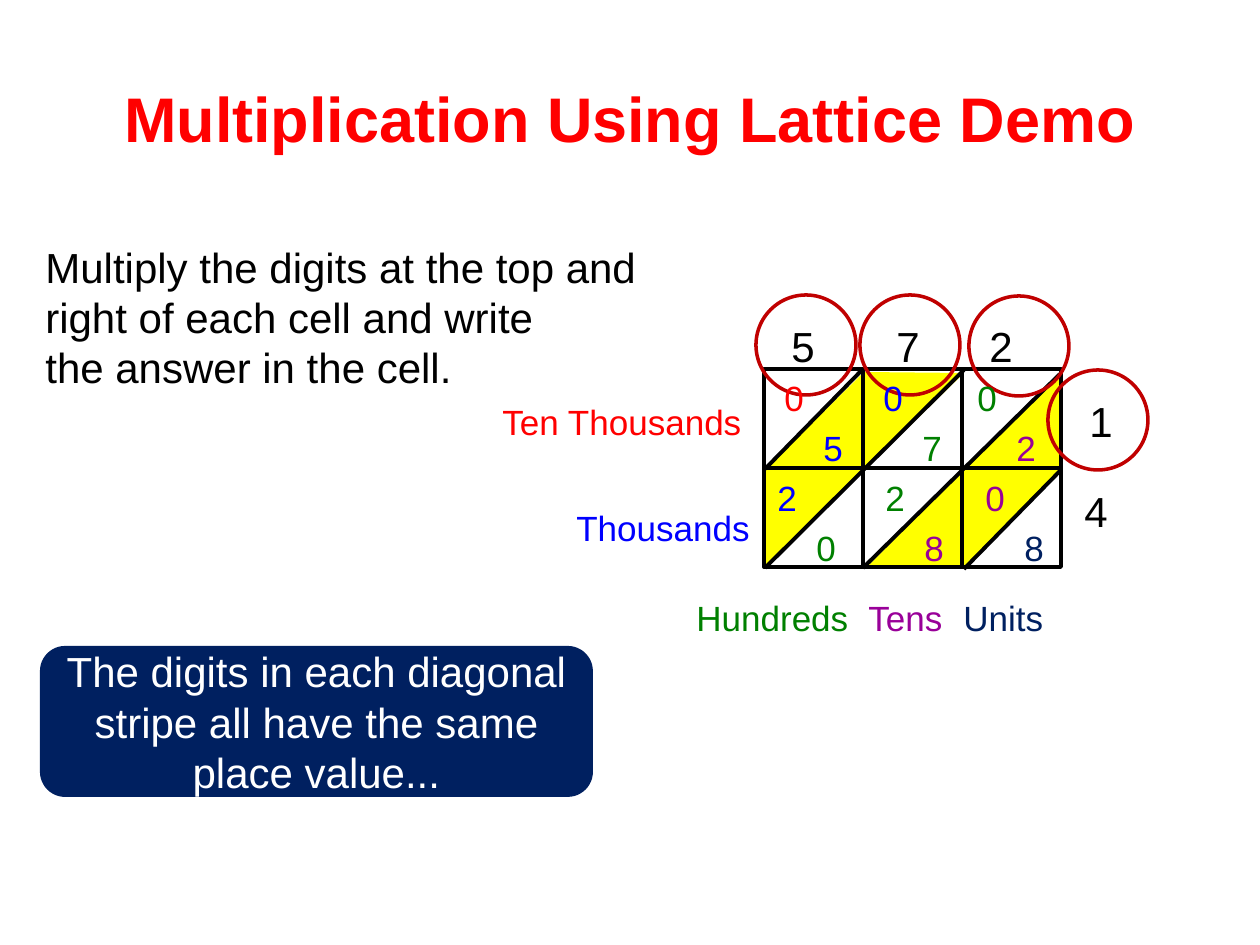
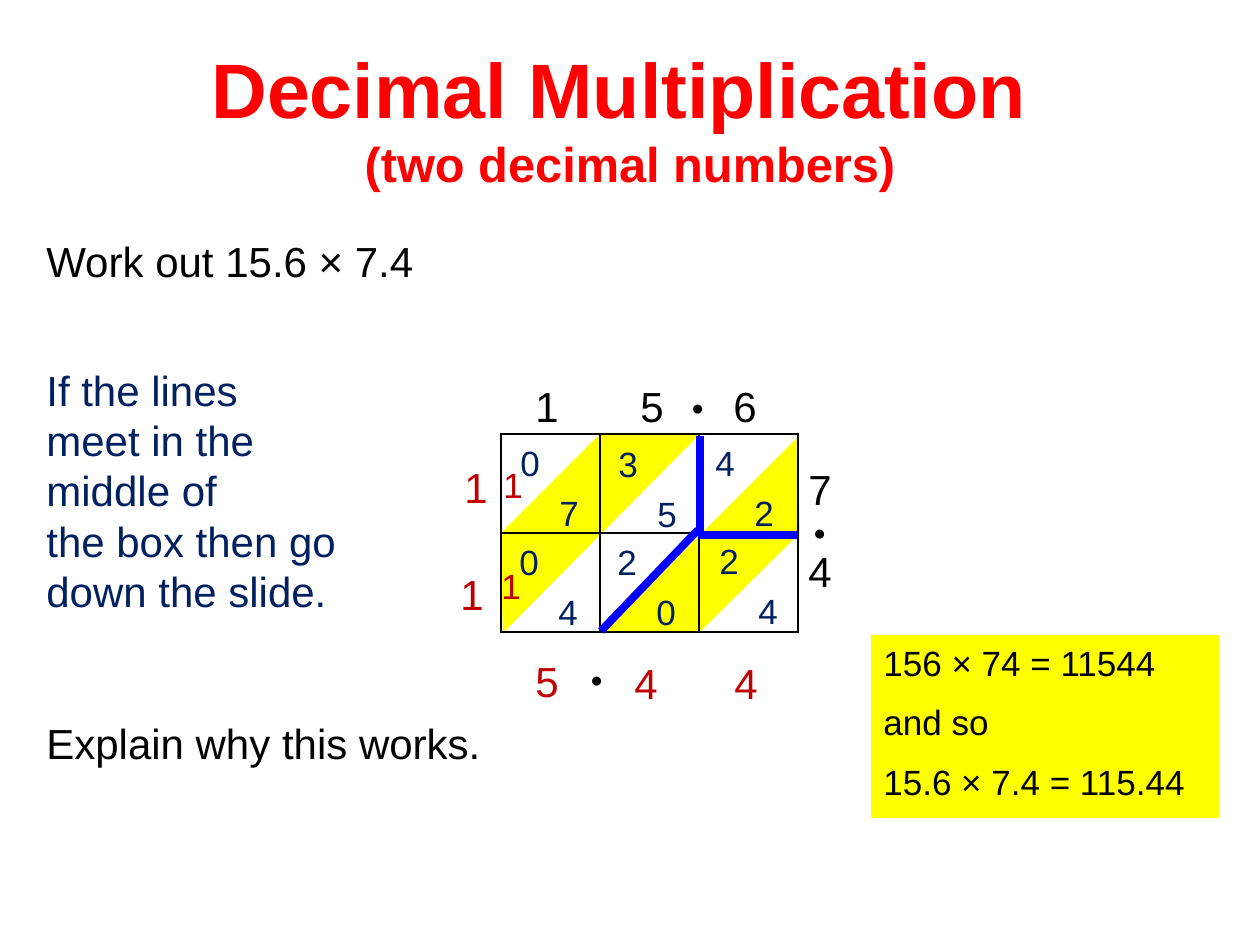
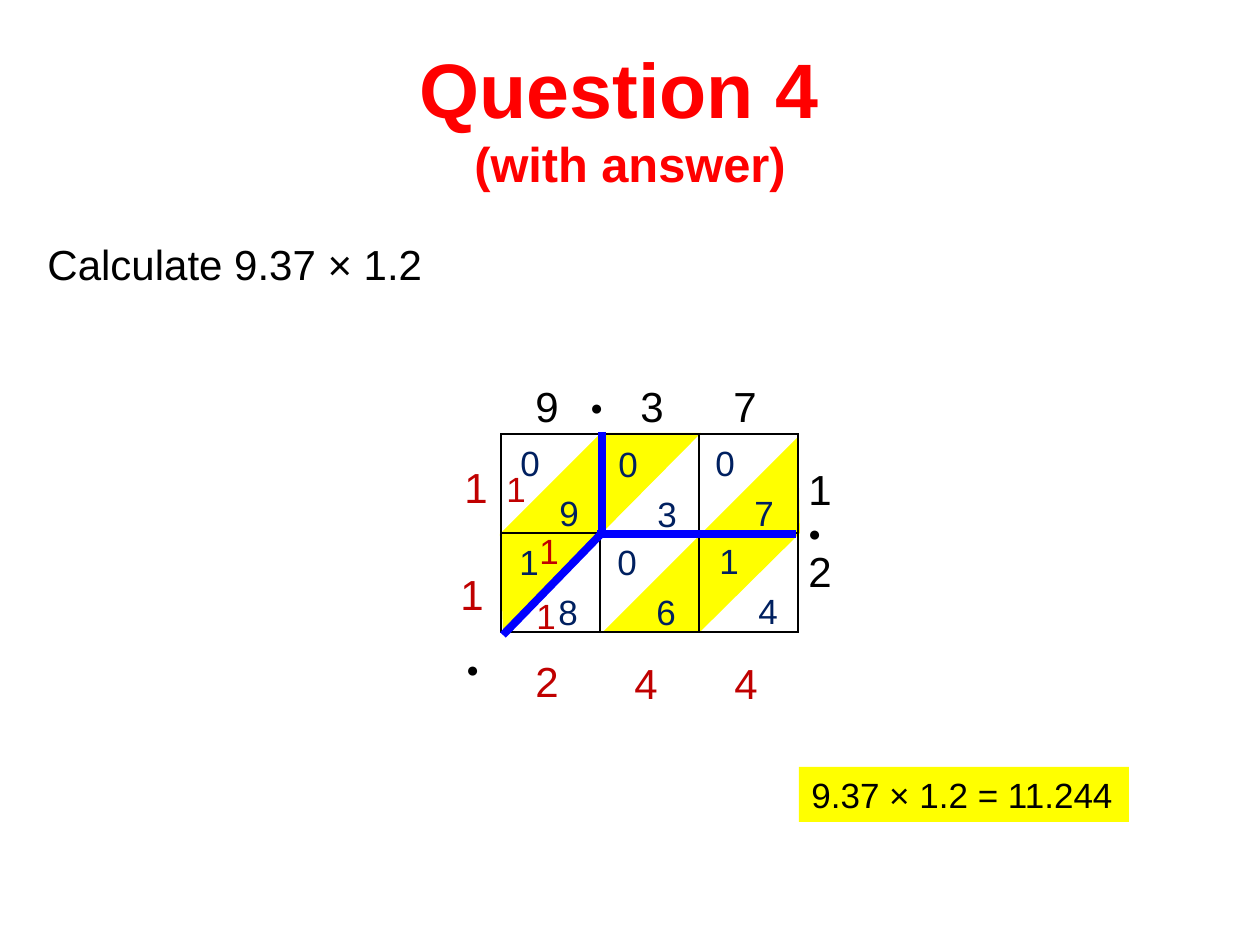
from lxml.etree import SubElement
from pptx import Presentation
from pptx.dml.color import RGBColor
from pptx.enum.shapes import MSO_CONNECTOR as Connector, MSO_SHAPE as Shape
from pptx.enum.text import MSO_ANCHOR as Anchor, MSO_AUTO_SIZE as AutoSize, PP_ALIGN as Align
from pptx.oxml.ns import qn
from pptx.util import Pt

PX = 914400 // 126
COLORS = {
    "black": "000000", "white": "FFFFFF", "red": "FF0000", "blue": "0000FF",
    "green": "008000", "purple": "990099", "navy": "002060",
    "crimson": "C00000", "yellow": "FFFF00",
}
FONT = "Arial"
NO_GRID = "{2D5ABB26-0587-4C30-8999-92F81FD0307C}"
CELL = 99
DIGIT_TABS = (105, 198)
LOW_DIGIT_INDENT = 39

DEMO = {
    "title": ["Multiplication Using Lattice Demo"],
    "title_sizes": [36],
    "title_box": (59, 38, 1142, 158),
    "grid": (764, 369),
    "stripes": [
        [(764, 569), (766, 469), (864, 372), (964, 373)],
        [(965, 569), (866, 568), (1061, 372), (1062, 467)],
    ],
    "diagonals": [
        (765, 469, 862, 370), (765, 568, 964, 370),
        (863, 568, 1060, 374), (964, 569, 1060, 471),
    ],
    "circles": [(756, 295), (860, 295), (969, 296), (1048, 370)],
    "top": ("5\t7\t2", 779, 314),
    "side": [("1", 1077, 389), ("4", 1072, 479)],
    "products": [
        ("05", 772, 370, "red", "blue"), ("07", 871, 370, "blue", "green"),
        ("02", 965, 370, "green", "purple"), ("20", 765, 470, "blue", "green"),
        ("28", 873, 470, "green", "purple"), ("08", 973, 470, "purple", "navy"),
    ],
    "places": [
        ("Ten Thousands", 490, 394, 277, "red"),
        ("Thousands", 564, 500, 277, "blue"),
        ("Units", 951, 590, 129, "navy"),
        ("Hundreds", 684, 590, 180, "green"),
        ("Tens", 856, 590, 277, "purple"),
    ],
    "body": "Multiply the digits at the top and \vright of each cell and write \vthe answer in the cell.",
    "callout": "The digits in each diagonal stripe all have the same place value...",
}

DECIMAL_STRIPES = [
    [(602, 633), (701, 631), (800, 533), (798, 437)],
    [(503, 633), (701, 433), (601, 433), (500, 534)],
]
PRODUCT_SPOTS = [(508, 435), (606, 436), (703, 435), (507, 534), (605, 534), (707, 533)]
TOTAL_SPOTS = [(452, 455), (448, 562), (523, 649), (622, 651), (722, 651)]

DECIMALS = [
    {
        "title": ["Decimal Multiplication ", "(two decimal numbers)"],
        "texts": [
            ("Work out 15.6 × 7.4", 34, 229, 700, 63, "black"),
            ("If the lines\nmeet in the\nmiddle of \vthe box then go\ndown the slide.",
             34, 358, 464, 264, "navy"),
            ("Explain why this works.", 34, 711, 464, 63, "black"),
        ],
        "top": "1\t5\t6",
        "side": "7\n4",
        "products": ["07", "35", "42", "04", "20", "24"],
        "totals": "11544",
        "carries": [(489, 558), (491, 457)],
        "points": [(679, 388), (801, 513), (578, 660)],
        "guides": [(700, 436, 700, 534), (698, 535, 798, 535), (698, 530, 601, 631)],
        "answer": ("156 × 74 = 11544\nand so\n15.6 × 7.4 = 115.44", 871, 635, 348, 183),
    },
    {
        "title": ["Question 4 ", "(with answer)"],
        "texts": [("Calculate 9.37 × 1.2", 35, 232, 700, 63, "black")],
        "top": "9\t3\t7",
        "side": "1\n2",
        "products": ["09", "03", "07", "18", "06", "14"],
        "totals": "11244",
        "carries": [(524, 588), (527, 523), (494, 461)],
        "points": [(578, 388), (796, 514), (454, 650)],
        "guides": [(602, 432, 602, 532), (597, 534, 796, 534), (601, 534, 503, 635)],
        "answer": ("9.37 × 1.2 = 11.244", 799, 767, 330, 55),
    },
]


def rgb(name):
    return RGBColor.from_string(COLORS[name])


def emu(*lengths):
    return [length * PX for length in lengths]


def style_run(span, size, color, font=FONT, bold=False):
    span.font.size = Pt(size)
    span.font.name = font
    span.font.bold = bold
    span.font.color.rgb = rgb(color)


def write(frame, text, size, color, font=FONT, gap=0):
    frame.text = text
    frame.word_wrap = True
    for index, para in enumerate(frame.paragraphs):
        para.space_before = Pt(gap if index else 0)
        for span in para.runs:
            style_run(span, size, color, font)


def add_text(page, text, left, top, width, height, color="black", size=24, font=FONT, gap=0):
    box = page.shapes.add_textbox(*emu(left, top, width, height))
    write(box.text_frame, text, size, color, font, gap)
    return box


def paint(shape, fill=None, line=None, width=0):
    shape.shadow.inherit = False
    if fill:
        shape.fill.solid()
        shape.fill.fore_color.rgb = rgb(fill)
    else:
        shape.fill.background()
    if line:
        shape.line.color.rgb = rgb(line)
        shape.line.width = Pt(width)
    else:
        shape.line.fill.background()


def add_line(page, ends, color, width):
    line = page.shapes.add_connector(Connector.STRAIGHT, *emu(*ends))
    line.line.color.rgb = rgb(color)
    line.line.width = Pt(width)
    SubElement(line._element.spPr, qn("a:effectLst"))


def add_stripes(page, stripes):
    for first, *others in stripes:
        builder = page.shapes.build_freeform(*first, scale=PX)
        builder.add_line_segments(others, close=True)
        paint(builder.convert_to_shape(), "yellow")


def add_title(page, lines, sizes, place):
    title = page.shapes.title
    title.left, title.top, title.width, title.height = emu(*place)
    frame = title.text_frame
    frame.text = "\v".join(lines)
    frame.auto_size = AutoSize.NONE
    frame.vertical_anchor = Anchor.MIDDLE
    para = frame.paragraphs[0]
    para.alignment = Align.CENTER
    for span, size in zip(para.runs, sizes):
        style_run(span, size, "red", bold=True)


def add_top_digits(page, text, left, top):
    box = add_text(page, text, left, top, 290, 63)
    tabs = SubElement(box.text_frame.paragraphs[0]._p.get_or_add_pPr(), qn("a:tabLst"))
    for position in DIGIT_TABS:
        SubElement(tabs, qn("a:tab"), pos=str(position * PX), algn="l")


def add_product(page, digits, left, top, high="navy", low="navy"):
    box = add_text(page, "\n".join(digits), left, top, 89, 106, high, 20, gap=4.8)
    para = box.text_frame.paragraphs[1]
    para._p.get_or_add_pPr().set("marL", str(LOW_DIGIT_INDENT * PX))
    para.runs[0].font.color.rgb = rgb(low)


def add_lattice_table(page):
    rows, columns = 4, 5
    frame = page.shapes.add_table(rows, columns, *emu(402, 335, columns * CELL, rows * CELL))
    table = frame.table
    table.first_row = table.horz_banding = False
    table._tbl.tblPr.find(qn("a:tableStyleId")).text = NO_GRID
    for row in range(rows):
        for column in range(columns):
            cell = table.cell(row, column)
            if 0 < row < rows - 1 and 0 < column < columns - 1:
                properties = cell._tc.get_or_add_tcPr()
                for side in ("lnL", "lnR", "lnT", "lnB"):
                    border = SubElement(properties, qn(f"a:{side}"), w=str(Pt(1)))
                    fill = SubElement(border, qn("a:solidFill"))
                    SubElement(fill, qn("a:srgbClr"), val=COLORS["black"])
            cell.fill.background()


def build_demo(page):
    add_stripes(page, DEMO["stripes"])
    add_title(page, DEMO["title"], DEMO["title_sizes"], DEMO["title_box"])
    add_text(page, DEMO["body"], 33, 235, 700, 164)
    add_top_digits(page, *DEMO["top"])
    for digit, left, top in DEMO["side"]:
        add_text(page, digit, left, top, 60, 63)
    grid_left, grid_top = DEMO["grid"]
    for row in range(2):
        for column in range(3):
            place = emu(grid_left + column * CELL, grid_top + row * CELL, CELL, CELL)
            paint(page.shapes.add_shape(Shape.RECTANGLE, *place), line="black", width=2.25)
    for ends in DEMO["diagonals"]:
        add_line(page, ends, "black", 2.25)
    for left, top in DEMO["circles"]:
        circle = page.shapes.add_shape(Shape.OVAL, *emu(left, top, 100, 100))
        paint(circle, line="crimson", width=2)
    for product in DEMO["products"]:
        add_product(page, *product)
    for name, left, top, width, color in DEMO["places"]:
        add_text(page, name, left, top, width, 55, color, 20)
    callout = page.shapes.add_shape(Shape.ROUNDED_RECTANGLE, *emu(40, 646, 553, 151))
    paint(callout, "navy")
    write(callout.text_frame, DEMO["callout"], 24, "white")
    callout.text_frame.vertical_anchor = Anchor.MIDDLE
    callout.text_frame.paragraphs[0].alignment = Align.CENTER


def build_decimal(page, content):
    add_stripes(page, DECIMAL_STRIPES)
    add_title(page, content["title"], (44.1, 27.9), (63, 38, 1134, 158))
    add_lattice_table(page)
    for text in content["texts"]:
        add_text(page, *text)
    add_top_digits(page, content["top"], 523, 374)
    add_text(page, content["side"], 796, 457, 50, 146, gap=18)
    for digits, spot in zip(content["products"], PRODUCT_SPOTS):
        add_product(page, digits, *spot)
    for digit, spot in zip(content["totals"], TOTAL_SPOTS):
        add_text(page, digit, *spot, 50, 63, "crimson")
    for spot in content["carries"]:
        add_text(page, "1", *spot, 46, 55, "crimson", 20)
    for spot in content["points"]:
        add_text(page, "●", *spot, 44, 38, size=12, font="Times New Roman")
    for ends in content["guides"]:
        add_line(page, ends, "blue", 4.5)
    text, *place = content["answer"]
    answer = page.shapes.add_shape(Shape.RECTANGLE, *emu(*place))
    paint(answer, "yellow")
    write(answer.text_frame, text, 20, "black", gap=10)
    answer.text_frame.vertical_anchor = Anchor.TOP
    for para in answer.text_frame.paragraphs:
        para.alignment = Align.LEFT


def main():
    deck = Presentation()
    deck.slide_width, deck.slide_height = emu(1260, 945)
    layout = deck.slide_layouts[5]
    build_demo(deck.slides.add_slide(layout))
    for content in DECIMALS:
        build_decimal(deck.slides.add_slide(layout), content)
    deck.save("out.pptx")


if __name__ == "__main__":
    main()
